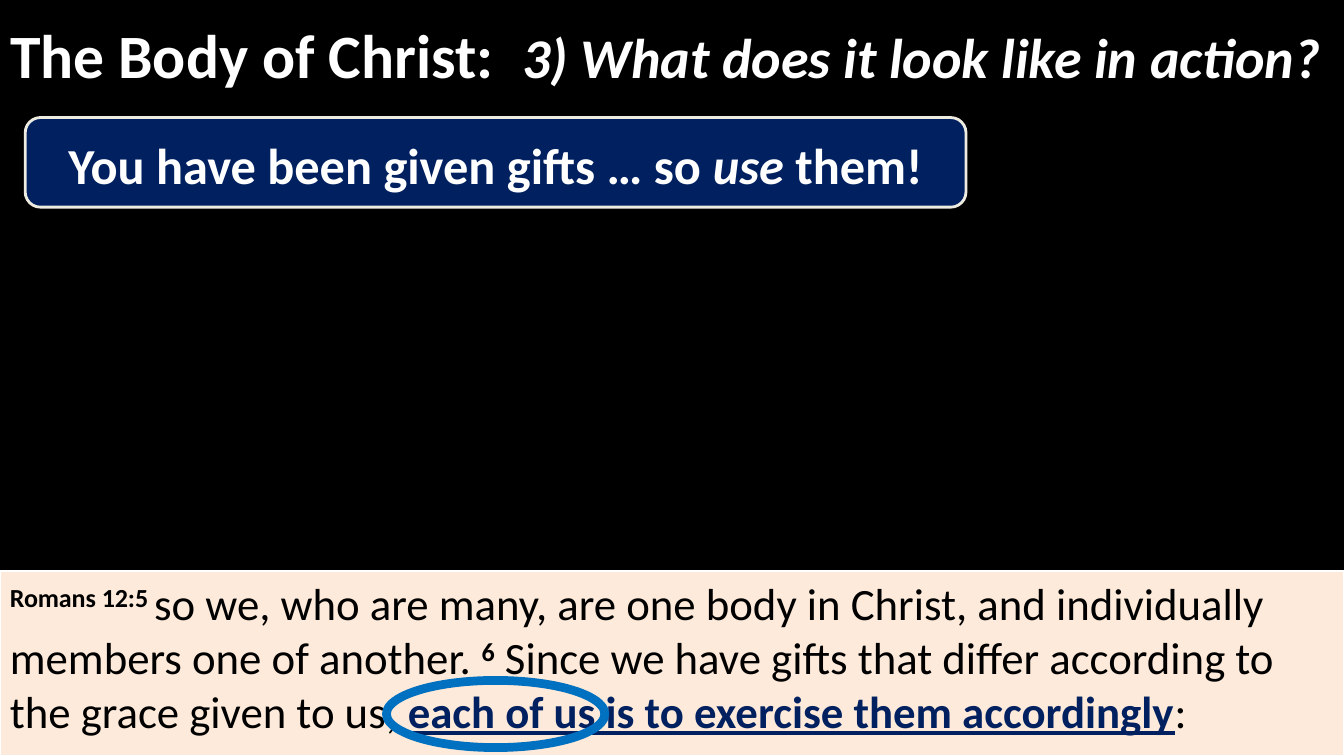
from dataclasses import dataclass

from lxml.etree import SubElement
from pptx import Presentation
from pptx.dml.color import RGBColor as Color
from pptx.enum.shapes import MSO_SHAPE as Shape
from pptx.enum.text import MSO_ANCHOR as Anchor, MSO_AUTO_SIZE as AutoSize, PP_ALIGN as Align
from pptx.oxml.ns import qn
from pptx.util import Pt


@dataclass(frozen=True)
class Theme:
    font: str = "Calibri"
    black: str = "000000"
    white: str = "FFFFFF"
    navy: str = "002060"
    cream: str = "EEECE1"
    peach: str = "FDEADA"
    blue: str = "0070C0"
    title: int = 44
    subtitle: int = 40
    callout: int = 36
    verse: int = 32


THEME = Theme()
WIDTH, HEIGHT = 960, 540


def paint(shape, fill=None, line=None, weight=0):
    """Set fill and outline; None leaves either empty."""
    if fill:
        shape.fill.solid()
        shape.fill.fore_color.rgb = Color.from_string(fill)
    else:
        shape.fill.background()
    if line:
        shape.line.color.rgb = Color.from_string(line)
        shape.line.width = Pt(weight)
    else:
        shape.line.fill.background()


def add_shape(page, kind, box, **look):
    shape = page.shapes.add_shape(kind, *map(Pt, box))
    shape.shadow.inherit = False
    paint(shape, **look)
    return shape


def write(shape, runs, base, align=Align.LEFT, anchor=Anchor.MIDDLE, spacing=1.0):
    """Write one paragraph of (text, format) runs over a base format."""
    frame = shape.text_frame
    frame_format = {
        "word_wrap": True, "auto_size": AutoSize.NONE, "vertical_anchor": anchor,
        "margin_left": Pt(7.2), "margin_right": Pt(7.2),
        "margin_top": Pt(3.6), "margin_bottom": Pt(3.6),
    }
    for name, value in frame_format.items():
        setattr(frame, name, value)
    para = frame.paragraphs[0]
    para.alignment, para.line_spacing = align, spacing
    for text, changes in runs:
        span = para.add_run()
        span.text = text
        values = {"name": THEME.font, **base, **changes}
        span.font.color.rgb = Color.from_string(values.pop("color"))
        if values.pop("raised", False):
            span.font._element.set("baseline", "30000")
        for name, value in values.items():
            setattr(span.font, name, value)


def title_bar(page, box):
    title = page.shapes.title
    title.left, title.top, title.width, title.height = map(Pt, box)
    paint(title, fill=THEME.black)
    # Translucent fill
    color = title.fill._xPr.find(qn("a:solidFill"))[0]
    SubElement(color, qn("a:alpha")).set("val", "64000")
    base = {"size": Pt(THEME.title), "color": THEME.white, "bold": True}
    write(title, [
        ("The Body of Christ:  ", {}),
        ("3) What does it look like in action?", {"size": Pt(THEME.subtitle), "italic": True}),
    ], base)


def gifts_callout(page, box):
    callout = add_shape(page, Shape.ROUNDED_RECTANGULAR_CALLOUT, box,
                        fill=THEME.navy, line=THEME.cream, weight=2)
    for index, value in enumerate((-0.22, 0.5, 0.17)):
        callout.adjustments[index] = value
    base = {"size": Pt(THEME.callout), "color": THEME.white, "bold": True}
    write(callout, [
        ("You have been given gifts … so ", {}),
        ("use", {"italic": True}),
        (" them!", {}),
    ], base, align=Align.CENTER, spacing=1.07)


def verse_panel(page, box):
    left, top, _, _ = box
    panel = add_shape(page, Shape.RECTANGLE, box,
                      fill=THEME.peach, line=THEME.white, weight=1.5)
    base = {"size": Pt(THEME.verse), "color": THEME.black, "bold": False}
    number = {"bold": True, "raised": True}
    write(panel, [
        ("Romans 12:5 ", number),
        ("so we, who are many, are one body in Christ, and individually "
         "members one of another. ", {}),
        ("6", number),
        (" Since we have gifts that differ according to the grace given to us, ", {}),
        ("each of us is to exercise them accordingly",
         {"color": THEME.navy, "bold": True, "underline": True}),
        (":", {}),
    ], base, anchor=Anchor.TOP)
    # Ring around "each of us"
    add_shape(page, Shape.OVAL, (left + 276, top + 78, 156, 48),
              line=THEME.blue, weight=6.25)


def main():
    deck = Presentation()
    deck.slide_width, deck.slide_height = Pt(WIDTH), Pt(HEIGHT)
    page = deck.slides.add_slide(deck.slide_layouts[5])
    page.background.fill.solid()
    page.background.fill.fore_color.rgb = Color.from_string(THEME.black)

    verse_height = 132
    title_bar(page, (0, 0, WIDTH, 77))
    verse_panel(page, (0, HEIGHT - verse_height, WIDTH, verse_height))
    gifts_callout(page, (18, 84, 672, 64))
    deck.save("out.pptx")


if __name__ == "__main__":
    main()
